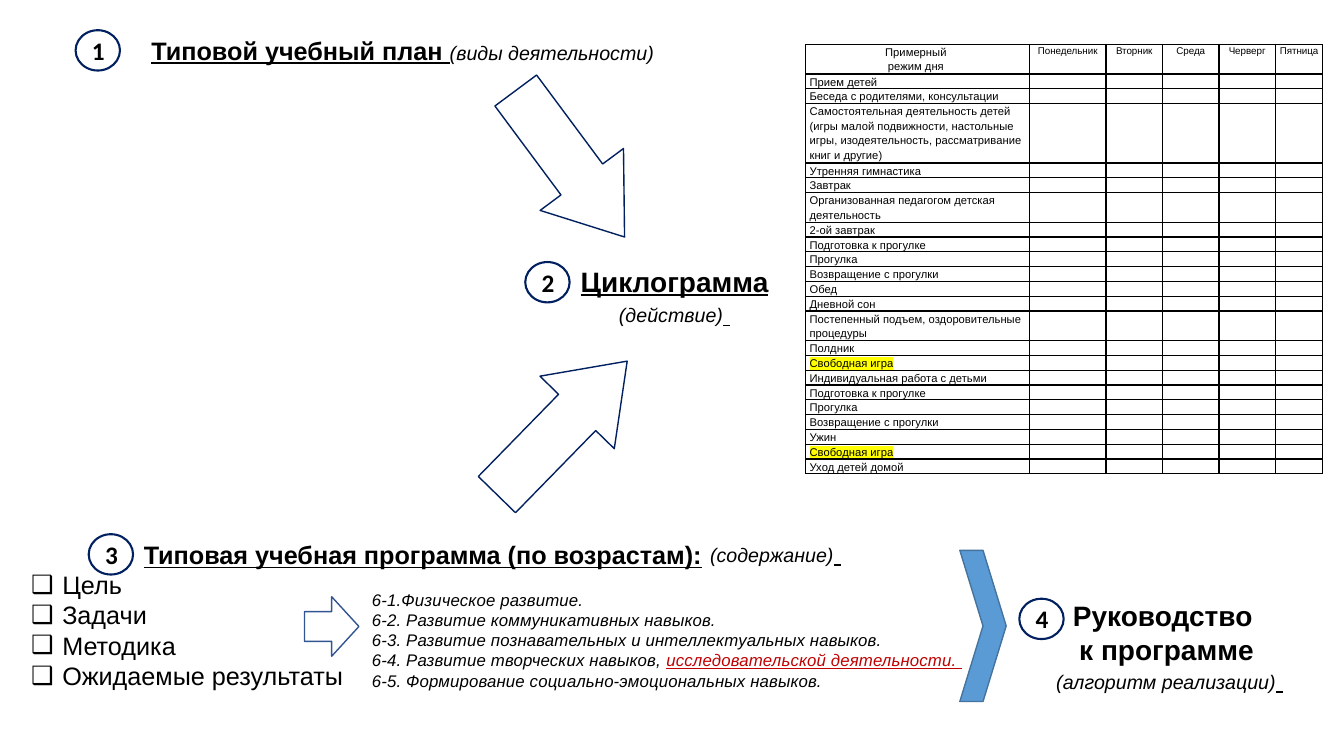
from lxml import etree
from pptx import Presentation
from pptx import util as u
from pptx.dml.color import RGBColor
from pptx.enum import shapes, text
from pptx.oxml.ns import qn

PX = 9144
COLORS = {"ink": "000000", "white": "FFFFFF", "navy": "002060", "slate": "325491",
          "blue": "5B9BD5", "steel": "43739E", "red": "C00000", "marker": "FFFF00"}
CENTER, LEFT, JUSTIFY = text.PP_ALIGN.CENTER, text.PP_ALIGN.LEFT, text.PP_ALIGN.JUSTIFY
KIND = shapes.MSO_SHAPE


def write(frame, lines, **base):
    frame.word_wrap = True
    for number, line in enumerate(lines):
        paragraph = frame.paragraphs[0] if number == 0 else frame.add_paragraph()
        for words, changes in line:
            look = {**base, **changes}
            paragraph.alignment = look.get("align", CENTER)
            paragraph.line_spacing = look.get("spacing")
            if "after" in look:
                paragraph.space_after = u.Pt(look["after"])
            props = paragraph._p.get_or_add_pPr()
            if "indent" in look:
                props.set("marL", str(look.get("margin", 0) * PX))
                props.set("indent", str(look["indent"] * PX))
            if "bullet" in look:
                etree.SubElement(props, qn("a:buFont")).set("typeface", "Arial")
                etree.SubElement(props, qn("a:buChar")).set("char", look["bullet"])
            run = paragraph.add_run()
            run.text = words
            run.font.size = u.Pt(look["size"])
            run.font.name = look.get("font", "Arial")
            run.font.bold = look.get("bold", False)
            run.font.italic = look.get("italic", False)
            run.font.underline = look.get("underline", False)
            run.font.color.rgb = RGBColor.from_string(COLORS[look.get("color", "ink")])
            run_props = run._r.get_or_add_rPr()
            if "tracking" in look:
                run_props.set("spc", str(look["tracking"]))
            if "highlight" in look:
                highlight = etree.Element(qn("a:highlight"))
                etree.SubElement(highlight, qn("a:srgbClr")).set("val", COLORS[look["highlight"]])
                run_props.find(qn("a:solidFill")).addnext(highlight)


def draw(kind, box, line, weight=1, fill=None, turn=0):
    figure = slide.shapes.add_shape(kind, *[side * PX for side in box])
    figure.shadow.inherit = False
    figure.rotation = turn
    figure.line.color.rgb = RGBColor.from_string(COLORS[line])
    figure.line.width = u.Pt(weight)
    if fill:
        figure.fill.solid()
        figure.fill.fore_color.rgb = RGBColor.from_string(COLORS[fill])
    else:
        figure.fill.background()
    return figure


deck = Presentation()
deck.slide_width, deck.slide_height = 1333 * PX, 750 * PX
slide = deck.slides.add_slide(deck.slide_layouts[6])

weekdays = ["Понедельник", "Вторник", "Среда", "Черверг", "Пятница"]
column_widths = [222, 76, 56, 56, 56, 47]
routine = [
    ("Прием детей", 1),
    ("Беседа с родителями, консультации", 1),
    ("Самостоятельная деятельность детей (игры малой подвижности, настольные игры, "
     "изодеятельность, рассматривание книг и другие)", 4),
    ("Утренняя гимнастика", 1),
    ("Завтрак", 1),
    ("Организованная педагогом детская деятельность", 2),
    ("2-ой завтрак", 1),
    ("Подготовка к прогулке", 1),
    ("Прогулка", 1),
    ("Возвращение с прогулки", 1),
    ("Обед", 1),
    ("Дневной сон", 1),
    ("Постепенный подъем, оздоровительные процедуры", 2),
    ("Полдник", 1),
    ("Свободная игра", 1),
    ("Индивидуальная работа с детьми", 1),
    ("Подготовка к прогулке", 1),
    ("Прогулка", 1),
    ("Возвращение с прогулки", 1),
    ("Ужин", 1),
    ("Свободная игра", 1),
    ("Уход детей домой", 1),
]
line_counts = [2] + [count for _, count in routine]
schedule = slide.shapes.add_table(len(line_counts), len(column_widths),
                                  799 * PX, 44 * PX, 513 * PX, 427 * PX).table
schedule.first_row = schedule.horz_banding = False
for column, width in zip(schedule.columns, column_widths):
    column.width = width * PX
for row, count in zip(schedule.rows, line_counts):
    row.height = 427 * PX * count // sum(line_counts)

for cell in schedule.iter_cells():
    cell.margin_left = cell.margin_right = 4 * PX
    cell.margin_top = cell.margin_bottom = 0
    cell.fill.solid()
    cell.fill.fore_color.rgb = RGBColor.from_string(COLORS["white"])
    for position, side in enumerate(["a:lnL", "a:lnR", "a:lnT", "a:lnB"]):
        border = etree.Element(qn(side), w=str(u.Pt(1)))
        paint = etree.SubElement(border, qn("a:solidFill"))
        etree.SubElement(paint, qn("a:srgbClr")).set("val", COLORS["ink"])
        cell._tc.get_or_add_tcPr().insert(position, border)

write(schedule.cell(0, 0).text_frame, [[("Примерный ", {})], [("режим дня ", {})]],
      size=8, spacing=1.15)
for day, weekday in enumerate(weekdays, 1):
    write(schedule.cell(0, day).text_frame, [[(weekday, {})]], size=7, spacing=1.15, after=10)
for number, (activity, _) in enumerate(routine, 1):
    mark = {"highlight": "marker"} if activity == "Свободная игра" else {}
    write(schedule.cell(number, 0).text_frame, [[(activity, mark)]],
          size=8, spacing=1.15, align=LEFT)
    for day in range(1, len(column_widths)):
        blank = schedule.cell(number, day).text_frame.paragraphs[0]
        etree.SubElement(blank._p, qn("a:endParaRPr")).set("sz", "800")

title = {"size": 18, "bold": True, "underline": True}
heading = {"size": 20, "bold": True}
remark = {"size": 14, "italic": True}
tail = (" ", title)
goal = {"size": 18, "align": LEFT, "margin": 31, "indent": -31, "bullet": "❑"}
area = {"size": 12, "italic": True, "align": JUSTIFY, "indent": 49, "tracking": 10}
captions = [
    ((21, 530, 797, 162),
     [[("Типовая учебная программа (по возрастам):", title)]]
     + [[(item, goal)] for item in ["Цель", "Задачи", "Методика", "Ожидаемые результаты"]]),
    ((310, 580, 774, 111),
     [[("6-1.Физическое развитие.", area)],
      [("6-2. Развитие коммуникативных навыков. ", area)],
      [("6-3. Развитие познавательных и интеллектуальных навыков.", area)],
      [("6-4. Развитие творческих навыков, ", area),
       ("исследовательской деятельности. ", {**area, "color": "red", "underline": True})],
      [("6-5. Формирование социально-эмоциональных навыков.", area)]]),
    ((75, 30, 649, 40),
     [[("Типовой учебный план ", title), ("(виды деятельности)", remark)]]),
    ((535, 257, 268, 74),
     [[("Циклограмма", {**heading, "underline": True})], [("(действие)", remark), tail]]),
    ((1023, 589, 268, 77), [[("Руководство ", heading)], [("к программе", heading)]]),
    ((635, 528, 268, 40), [[("(содержание)", remark), tail]]),
    ((1026, 654, 268, 40), [[("(алгоритм реализации)", remark), tail]]),
]
for box, lines in captions:
    caption = slide.shapes.add_textbox(*[side * PX for side in box])
    write(caption.text_frame, lines)
    caption.text_frame.auto_size = text.MSO_AUTO_SIZE.SHAPE_TO_FIT_TEXT

draw(KIND.RIGHT_ARROW, (302, 592, 54, 59), "slate")
for box, turn in [((475, 111, 181, 103), 53.4), ((465, 373, 185, 103), 314.3)]:
    flow = draw(KIND.RIGHT_ARROW, box, "navy", fill="white", turn=turn)
    flow.adjustments[1] = 0.69
draw(KIND.CHEVRON, (952, 546, 46, 150), "steel", fill="blue")

for step, (left, top) in enumerate([(75, 30), (521, 260), (88, 530), (1011, 594)], 1):
    badge = draw(KIND.OVAL, (left, top, 44, 40), "navy", weight=1.5, fill="white")
    badge.text_frame.vertical_anchor = text.MSO_ANCHOR.MIDDLE
    write(badge.text_frame, [[(str(step), {})]], size=18, bold=True, font="Calibri")

deck.save("out.pptx")
